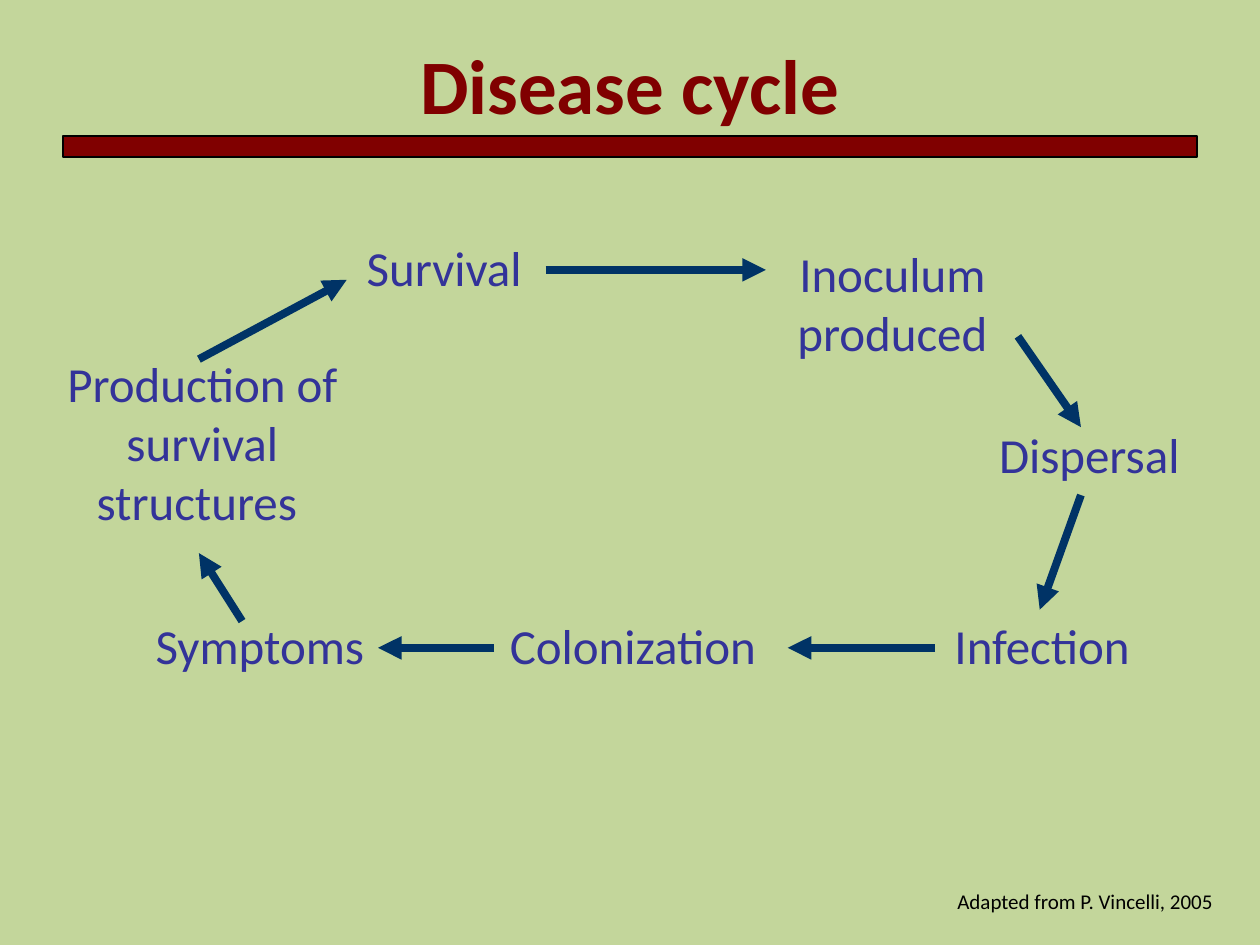
from pptx import Presentation
from pptx import util as u
from pptx.dml.color import RGBColor
from pptx.enum import shapes, text
from pptx.oxml import ns
from lxml import etree

COLORS = {"page": "C3D69B", "title": "800000", "stage": "333399",
          "arrow": "003366", "ink": "000000"}
FONT = "Calibri"

# Content; all lengths in cm
TITLE = "Disease cycle"
CREDIT = "Adapted from P. Vincelli, 2005"
STAGE_WIDTH, LINE_HEIGHT, INSETS = 6.02, 1.18, 0.27
LOWER_ROW, LOWER_ARROW, UPPER_ARROW = 12.29, 13.06, 5.44

# Stage: wording, left, top, width, number of lines
STAGES = [
    ("Survival", 7.14, 4.67, 3.63, 1),
    ("Inoculum produced", 14.6, 4.78, 6.78, 2),
    ("Dispersal", 18.95, 8.43, STAGE_WIDTH, 1),
    ("Infection ", 18.11, LOWER_ROW, STAGE_WIDTH, 1),
    ("Colonization ", 9.86, LOWER_ROW, STAGE_WIDTH, 1),
    ("Symptoms ", 2.34, LOWER_ROW, STAGE_WIDTH, 1),
    ("Production of survival structures ", 1.07, 7.01, STAGE_WIDTH, 3),
]

# Arrows in cycle order: start x, start y, end x, end y
ARROWS = [
    (11, UPPER_ARROW, 15.44, UPPER_ARROW),
    (20.52, 6.78, 21.79, 8.61),
    (21.79, 9.98, 20.96, 12.29),
    (18.85, LOWER_ARROW, 15.88, LOWER_ARROW),
    (9.96, LOWER_ARROW, 7.62, LOWER_ARROW),
    (4.88, 12.52, 4.01, 11.15),
    (4.01, 7.24, 6.99, 5.64),
]


def color(name):
    return RGBColor.from_string(COLORS[name])


def add_text(page, wording, place, size, ink, bold=False, centered=True, wrap=True):
    box = page.shapes.add_textbox(*map(u.Cm, place))
    frame = box.text_frame
    frame.text = wording
    frame.word_wrap = wrap
    frame.auto_size = text.MSO_AUTO_SIZE.SHAPE_TO_FIT_TEXT
    para = frame.paragraphs[0]
    para.alignment = text.PP_ALIGN.CENTER if centered else text.PP_ALIGN.LEFT
    font = para.runs[0].font
    font.name, font.size, font.bold = FONT, u.Pt(size), bold
    font.color.rgb = color(ink)


def add_arrow(page, ends):
    arrow = page.shapes.add_connector(shapes.MSO_CONNECTOR.STRAIGHT, *map(u.Cm, ends))
    arrow.line.color.rgb = color("arrow")
    arrow.line.width = u.Pt(4.5)
    etree.SubElement(arrow.line._get_or_add_ln(), ns.qn("a:tailEnd"), type="triangle")
    etree.SubElement(arrow._element.spPr, ns.qn("a:effectLst"))


def main():
    deck = Presentation()
    deck.slide_width, deck.slide_height = u.Cm(25.4), u.Cm(19.05)
    page = deck.slides.add_slide(deck.slide_layouts[6])
    page.background.fill.solid()
    page.background.fill.fore_color.rgb = color("page")

    # Title and the bar below it
    bar = page.shapes.add_shape(shapes.MSO_SHAPE.RECTANGLE,
                                *map(u.Cm, (1.27, 2.74, 22.86, 0.43)))
    bar.shadow.inherit = False
    bar.fill.solid()
    bar.fill.fore_color.rgb = color("title")
    bar.line.color.rgb = color("ink")
    bar.line.width = u.Pt(1)
    add_text(page, TITLE, (0, 0.64, 25.4, 2.13), 44, "title", bold=True)

    # Cycle
    for wording, left, top, width, lines in STAGES:
        height = lines * LINE_HEIGHT + INSETS
        add_text(page, wording, (left, top, width, height), 28, "stage")
    for ends in ARROWS:
        add_arrow(page, ends)

    # Credit line
    add_text(page, CREDIT, (19.05, 17.78, 5.72, 0.76), 12, "ink",
             centered=False, wrap=False)

    deck.save("out.pptx")


if __name__ == "__main__":
    main()
